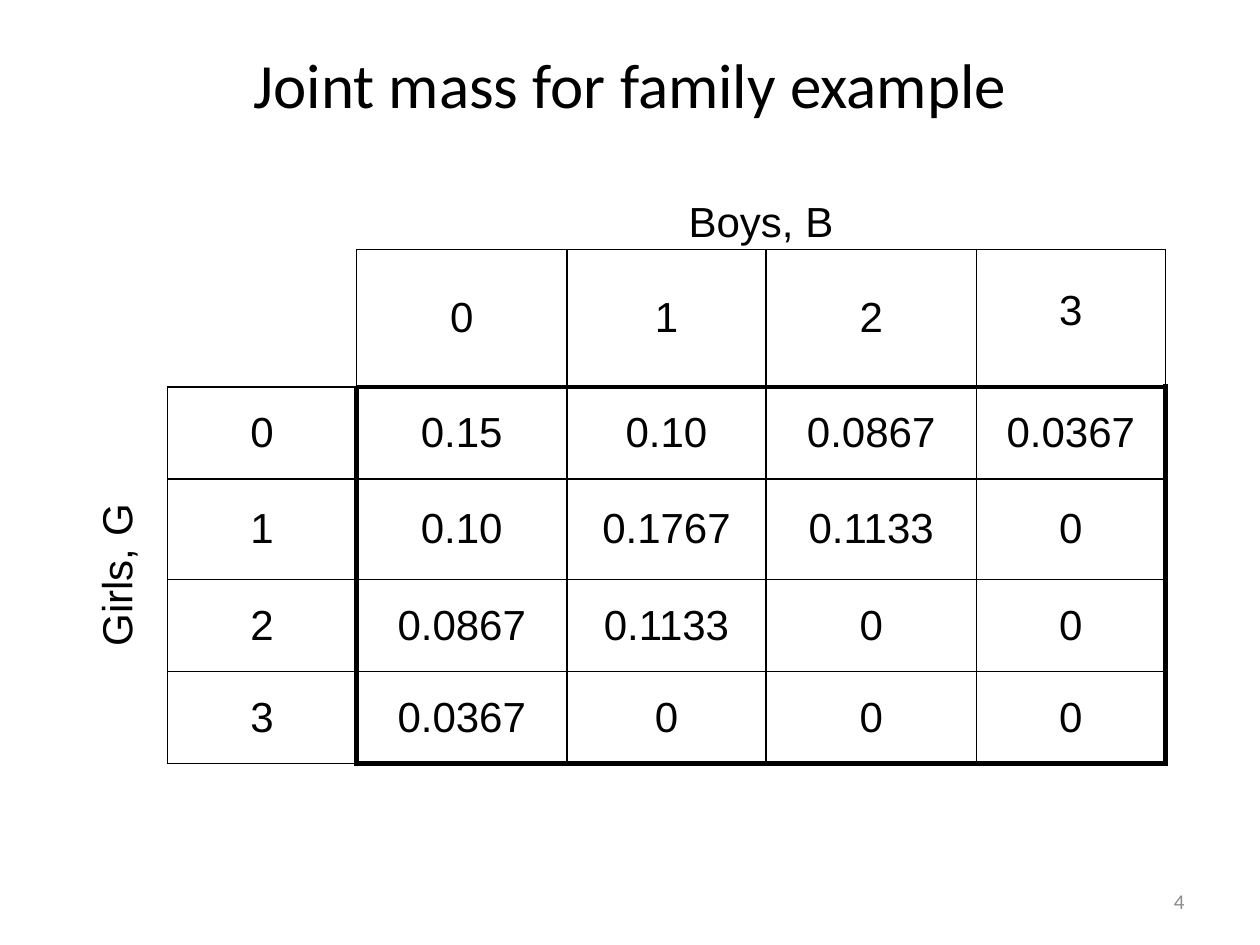
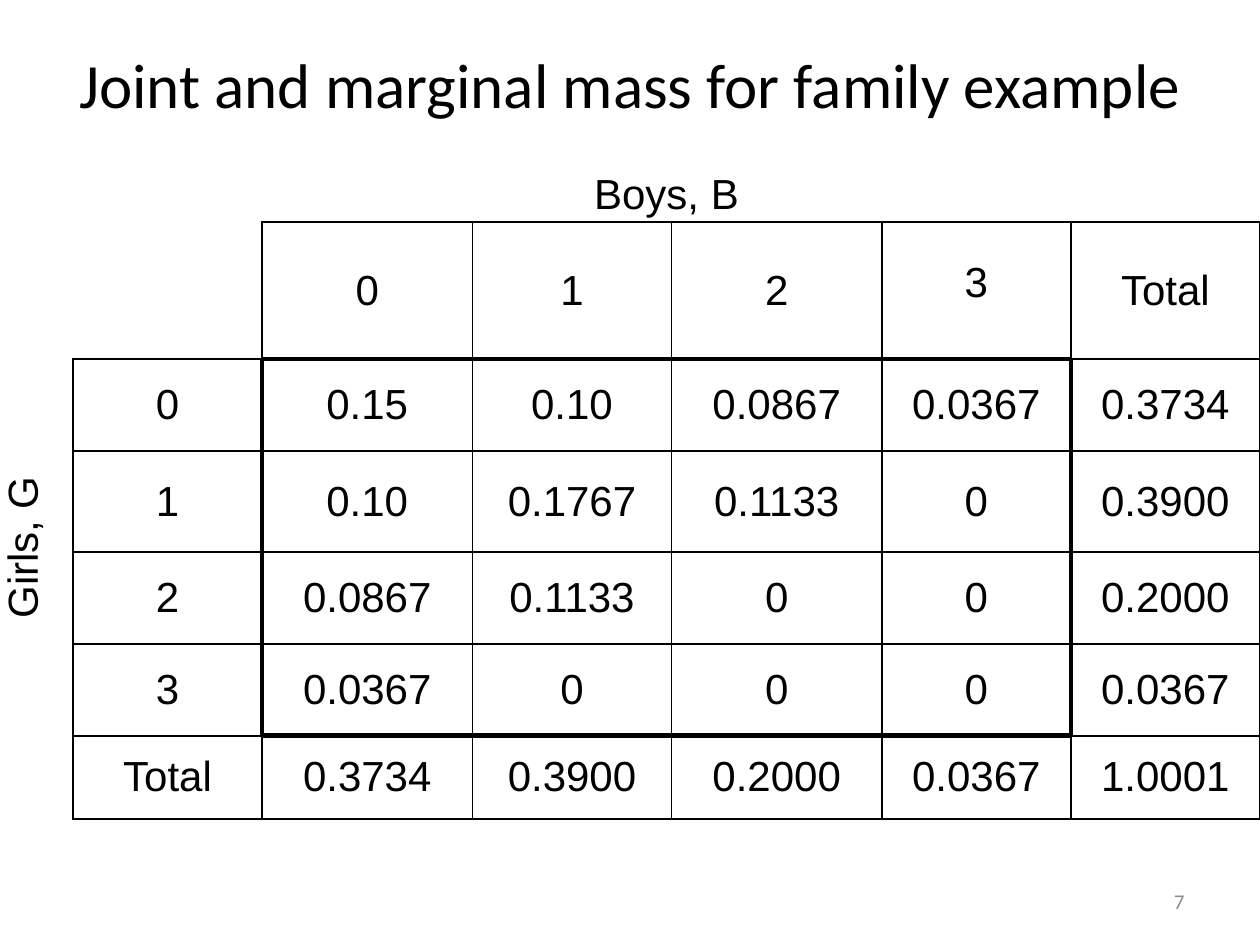
from lxml.etree import SubElement
from pptx import Presentation
from pptx.dml.color import RGBColor
from pptx.enum.text import MSO_ANCHOR as Anchor, PP_ALIGN as Align
from pptx.oxml.ns import qn
from pptx.util import Inches, Pt

JOINT = [
    ["0.15", "0.10", "0.0867", "0.0367"],
    ["0.10", "0.1767", "0.1133", "0"],
    ["0.0867", "0.1133", "0", "0"],
    ["0.0367", "0", "0", "0"],
]
COUNTS = ["0", "1", "2", "3"]
WIDTHS = [0.58, 1.5, 1.67, 1.58, 1.67, 1.5]
HEIGHTS = [0.36, 1.09, 0.73, 0.8, 0.73, 0.73]
FIRST, LAST = 2, 5


def color(code):
    """Turn a hex string into a colour."""
    return RGBColor.from_string(code)


def shown(row, col):
    """Tell whether a cell of the grid has borders."""
    return row > 0 and col > 0 and (row, col) != (1, 1)


def weight(line, along, one, two):
    """Give the width in points of the edge between two cells."""
    if line in (FIRST, LAST + 1) and FIRST <= along <= LAST:
        return 3
    return 1 if shown(*one) or shown(*two) else 0


def total(cells):
    """Add up one row or column of masses."""
    return f"{sum(map(float, cells)):.4f}"


class Deck:
    """Hold the style and the current slide."""

    ink, pale = "000000", "8C8C8C"
    head, body = "Calibri", "Arial"

    def __init__(self):
        """Start an empty presentation."""
        self.file = Presentation()
        self.file.slide_width = Inches(10)
        self.file.slide_height = Inches(7.5)

    def page(self, title, number):
        """Add a slide with its title and number."""
        self.slide = self.file.slides.add_slide(self.file.slide_layouts[6])
        self.label(title, (0, 0, 10, 1.33), 36, self.ink, Align.CENTER)
        self.label(number, (7.17, 6.95, 2.33, 0.4), 12, self.pale, Align.RIGHT)

    def words(self, frame, text, size, font, tint, align):
        """Put one run of text in a frame."""
        para = frame.paragraphs[0]
        para.alignment = align
        run = para.add_run()
        run.text = text
        run.font.size, run.font.name = Pt(size), font
        run.font.color.rgb = color(tint)

    def label(self, text, box, size, tint, align):
        """Add a text box centred on its height."""
        frame = self.slide.shapes.add_textbox(*map(Inches, box)).text_frame
        frame.word_wrap = True
        frame.vertical_anchor = Anchor.MIDDLE
        self.words(frame, text, size, self.head, tint, align)

    def fill(self, cell, text, anchor=Anchor.MIDDLE):
        """Set the text of a table cell."""
        cell.vertical_anchor = anchor
        self.words(cell.text_frame, text, 24, self.body, self.ink, Align.CENTER)

    def edges(self, cell, row, col):
        """Draw the four borders of a cell."""
        here = (row, col)
        sides = {
            "L": weight(col, row, (row, col - 1), here),
            "R": weight(col + 1, row, here, (row, col + 1)),
            "T": weight(row, col, (row - 1, col), here),
            "B": weight(row + 1, col, here, (row + 1, col)),
        }
        props = cell._tc.get_or_add_tcPr()
        for side, width in sides.items():
            line = SubElement(props, qn(f"a:ln{side}"), w=str(Pt(width)))
            if width:
                paint = SubElement(line, qn("a:solidFill"))
                SubElement(paint, qn("a:srgbClr"), val=self.ink)
            else:
                SubElement(line, qn("a:noFill"))

    def grid(self, left, top, widths, heights, values):
        """Add the mass table, with values from its second row and column."""
        size = map(Inches, (left, top, sum(widths), sum(heights)))
        table = self.slide.shapes.add_table(len(heights), len(widths), *size).table
        table.first_row = table.horz_banding = False
        for col, width in zip(table.columns, widths):
            col.width = Inches(width)
        for row, height in zip(table.rows, heights):
            row.height = Inches(height)
        for r in range(len(heights)):
            for c in range(len(widths)):
                cell = table.cell(r, c)
                cell.margin_left = cell.margin_right = Inches(0.07)
                cell.margin_top = cell.margin_bottom = 0
                self.edges(cell, r, c)
                cell.fill.background()
                if shown(r, c):
                    self.fill(cell, values[r - 1][c - 1])
        last = table.cell(1, LAST)
        last.vertical_anchor = Anchor.BOTTOM
        last.margin_bottom = Inches(0.42)
        boys, girls = table.cell(0, FIRST), table.cell(FIRST, 0)
        boys.merge(table.cell(0, LAST))
        girls.merge(table.cell(LAST, 0))
        self.fill(boys, "Boys, B", Anchor.TOP)
        self.fill(girls, "Girls, G")
        girls._tc.get_or_add_tcPr().set("vert", "vert270")


def main():
    """Build both slides and save them."""
    joint = [["", *COUNTS]] + [[n, *row] for n, row in zip(COUNTS, JOINT)]
    sums = [total(col) for col in zip(*JOINT)]
    full = [joint[0] + ["Total"]]
    full += [row + [total(row[1:])] for row in joint[1:]]
    full.append(["Total", *sums, total(sums)])

    deck = Deck()
    deck.page("Joint mass for family example", "4")
    deck.grid(0.75, 1.58, WIDTHS, HEIGHTS, joint)
    deck.page("Joint and marginal mass for family example", "7")
    deck.grid(0, 1.36, WIDTHS + [1.5], HEIGHTS + [0.66], full)
    deck.file.save("out.pptx")


if __name__ == "__main__":
    main()
